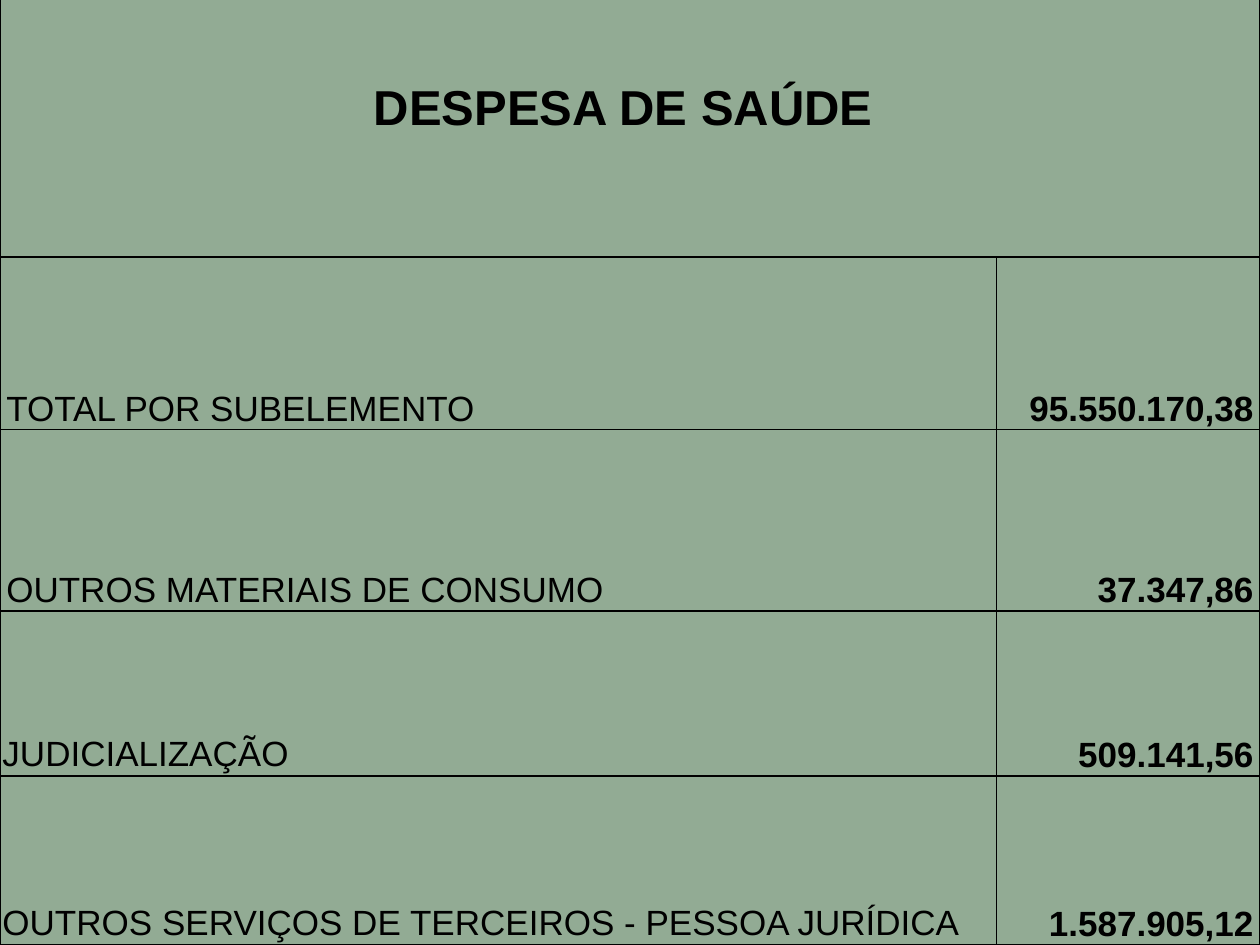
from lxml import etree
from pptx import Presentation
from pptx.dml.color import RGBColor
from pptx.enum import text as t
from pptx.oxml import parse_xml
from pptx.oxml.ns import nsdecls, qn
from pptx.util import Pt

HEAD = "DESPESA DE SAÚDE "
# label, value, row height, label side inset, label top and bottom inset
ROWS = [
    ("TOTAL POR SUBELEMENTO", "95.550.170,38", 98.6, 3.6, 0.7),
    ("OUTROS MATERIAIS DE CONSUMO", "37.347,86", 103.7, 3.6, 0.7),
    ("JUDICIALIZAÇÃO", "509.141,56", 94.3, 1.4, 1.4),
    ("OUTROS SERVIÇOS DE TERCEIROS - PESSOA JURÍDICA", "1.587.905,12", 96.5, 1.4, 1.4),
]
COLS = (569.5, 150.5)
TOP, HEAD_H = -23, 169.9
COLORS = {"back": "000000", "ink": "000000", "line": "000000", "cell": "AAC8AD"}
ALPHA = 86


def rgb(name):
    return RGBColor.from_string(COLORS[name])


def paint(cell):
    """Draw four borders, then the see-through fill."""
    props = cell._tc.get_or_add_tcPr()
    for side in "LRTB":
        props.append(parse_xml(
            f'<a:ln{side} {nsdecls("a")} w="{Pt(1)}"><a:solidFill>'
            f'<a:srgbClr val="{COLORS["line"]}"/></a:solidFill></a:ln{side}>'))
    cell.fill.solid()
    cell.fill.fore_color.rgb = rgb("cell")
    tint = props.find(qn("a:solidFill")).find(qn("a:srgbClr"))
    etree.SubElement(tint, qn("a:alpha")).set("val", str(ALPHA * 1000))


def write(cell, words, size, bold, align, anchor, side, edge):
    cell.margin_left = cell.margin_right = Pt(side)
    cell.margin_top = cell.margin_bottom = Pt(edge)
    cell.vertical_anchor = anchor
    para = cell.text_frame.paragraphs[0]
    para.text = words
    para.alignment = align
    font = para.font
    font.name, font.size, font.bold = "Arial", Pt(size), bold
    font.color.rgb = rgb("ink")
    return para


def main():
    deck = Presentation()
    deck.slide_width, deck.slide_height = Pt(720), Pt(540)
    slide = deck.slides.add_slide(deck.slide_layouts[6])
    back = slide.background.fill
    back.solid()
    back.fore_color.rgb = rgb("back")

    highs = [HEAD_H] + [row[2] for row in ROWS]
    table = slide.shapes.add_table(
        len(highs), len(COLS), 0, Pt(TOP), Pt(sum(COLS)), Pt(sum(highs))).table
    table.first_row = table.horz_banding = False
    for col, wide in zip(table.columns, COLS):
        col.width = Pt(wide)
    for row, high in zip(table.rows, highs):
        row.height = Pt(high)
        for cell in row.cells:
            paint(cell)

    head = table.cell(0, 0)
    head.merge(table.cell(0, 1))
    write(head, HEAD, 28, True, t.PP_ALIGN.CENTER, t.MSO_ANCHOR.MIDDLE, 2.9, 0.7)

    low = t.MSO_ANCHOR.BOTTOM
    for i, (label, value, _, side, edge) in enumerate(ROWS, 1):
        for para in (
            write(table.cell(i, 0), label, 20, False, t.PP_ALIGN.LEFT, low, side, edge),
            write(table.cell(i, 1), value, 20, True, t.PP_ALIGN.RIGHT, low, 3.6, 0.7),
        ):
            para.line_spacing = 1.07
            para.space_after = Pt(8)

    deck.save("out.pptx")


if __name__ == "__main__":
    main()
